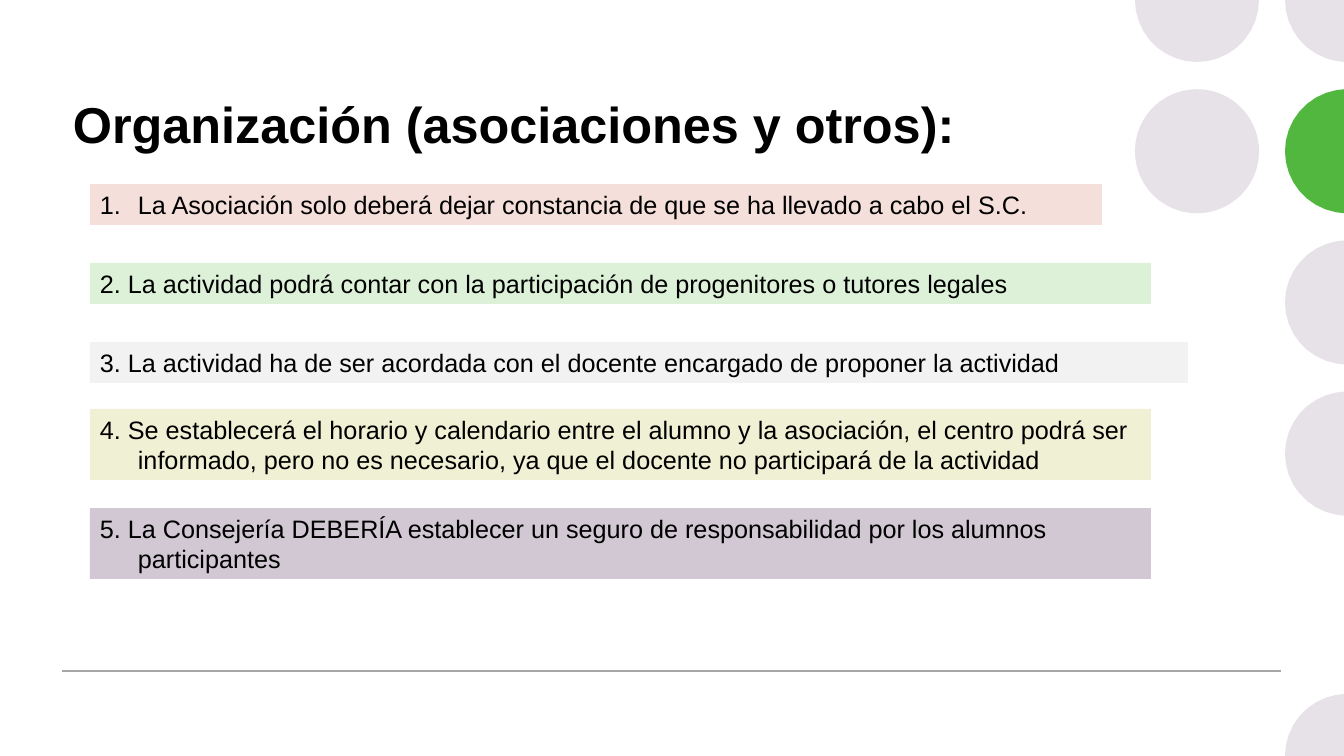
"""Build a slide of five organisation rules beside a column of clipped circles."""
from math import cos, radians, sin

from lxml.etree import SubElement
from pptx import Presentation
from pptx.dml.color import RGBColor
from pptx.enum.shapes import MSO_CONNECTOR, MSO_SHAPE
from pptx.enum.text import MSO_ANCHOR, PP_ALIGN
from pptx.oxml.ns import qn
from pptx.util import Pt

TITLE = "Organización (asociaciones y otros):"
RULES = [
    ("La Asociación solo deberá dejar constancia de que se ha llevado a cabo el S.C.",
     184, 1012, 41, "F4DFDA"),
    ("2. La actividad podrá contar con la participación de progenitores o tutores legales",
     263, 1061, 41, "DCF1D8"),
    ("3. La actividad ha de ser acordada con el docente encargado de proponer la actividad",
     342, 1098, 41, "F2F2F2"),
    ("4. Se establecerá el horario y calendario entre el alumno y la asociación, "
     "el centro podrá ser informado, pero no es necesario, ya que el docente no "
     "participará de la actividad", 409, 1061, 71, "F0F0D4"),
    ("5. La Consejería DEBERÍA establecer un seguro de responsabilidad por los alumnos "
     "participantes", 508, 1061, 71, "D2C8D4"),
]
PALE, GREEN = "E7E2E8", "51B73F"
CIRCLES = [(0, 0, PALE), (0, 1, PALE), (1, 0, PALE), (1, 1, GREEN),
           (1, 2, PALE), (1, 3, PALE), (1, 5, PALE)]

WIDTH, HEIGHT = 1344, 756
SCALE = 12192000 / WIDTH
RADIUS, COLUMN_X, COLUMN_STEP, ROW_STEP = 62, 1197, 150, HEIGHT / 5
RULE_LEFT, HANGING = 90, 38


def px(length):
    return round(length * SCALE)


def color(value):
    return RGBColor.from_string(value)


def paint(shape, fill):
    shape.shadow.inherit = False
    shape.fill.solid()
    shape.fill.fore_color.rgb = color(fill)
    shape.line.fill.background()


def write(shape, text, size, bold=False):
    frame = shape.text_frame
    frame.word_wrap = True
    frame.vertical_anchor = MSO_ANCHOR.MIDDLE
    paragraph = frame.paragraphs[0]
    paragraph.text = text
    paragraph.alignment = PP_ALIGN.LEFT
    paragraph.font.name = "Arial"
    paragraph.font.size = Pt(size)
    paragraph.font.bold = bold
    paragraph.font.color.rgb = color("000000")
    return paragraph


def add_circle(shapes, column, row, fill):
    center_x, center_y = COLUMN_X + column * COLUMN_STEP, row * ROW_STEP
    left, top = center_x - RADIUS, center_y - RADIUS
    if top >= 0 and center_x + RADIUS <= WIDTH:
        circle = shapes.add_shape(MSO_SHAPE.OVAL, px(left), px(top),
                                  px(2 * RADIUS), px(2 * RADIUS))
    else:
        first, last = (90, 270) if column else (0, 180)
        angles = [radians(angle) for angle in range(first, last + 1, 10)]
        points = [(px(min(center_x + RADIUS * cos(angle), WIDTH)),
                   px(min(max(center_y + RADIUS * sin(angle), 0), HEIGHT)))
                  for angle in angles]
        builder = shapes.build_freeform(*points[0])
        builder.add_line_segments(points[1:], close=True)
        circle = builder.convert_to_shape()
    paint(circle, fill)


def main():
    presentation = Presentation()
    presentation.slide_width, presentation.slide_height = px(WIDTH), px(HEIGHT)
    slide = presentation.slides.add_slide(presentation.slide_layouts[6])
    shapes = slide.shapes

    for column, row, fill in CIRCLES:
        add_circle(shapes, column, row, fill)

    line = shapes.add_connector(MSO_CONNECTOR.STRAIGHT, px(62), px(671), px(1281), px(671))
    line.line.color.rgb = color("A6A6A6")
    line.line.width = Pt(1)
    SubElement(line._element.spPr, qn("a:effectLst"))

    title = shapes.add_textbox(px(63), px(85), px(984), px(77))
    write(title, TITLE, 36, bold=True)

    for index, (text, top, width, height, fill) in enumerate(RULES):
        bar = shapes.add_shape(MSO_SHAPE.RECTANGLE, px(RULE_LEFT), px(top),
                               px(width), px(height))
        paint(bar, fill)
        properties = write(bar, text, 18)._p.get_or_add_pPr()
        properties.set("marL", str(px(HANGING)))
        properties.set("indent", str(-px(HANGING)))
        if index == 0:
            numbering = properties.makeelement(qn("a:buAutoNum"), {"type": "arabicPeriod"})
            properties.insert(0, numbering)

    presentation.save("out.pptx")


if __name__ == "__main__":
    main()
